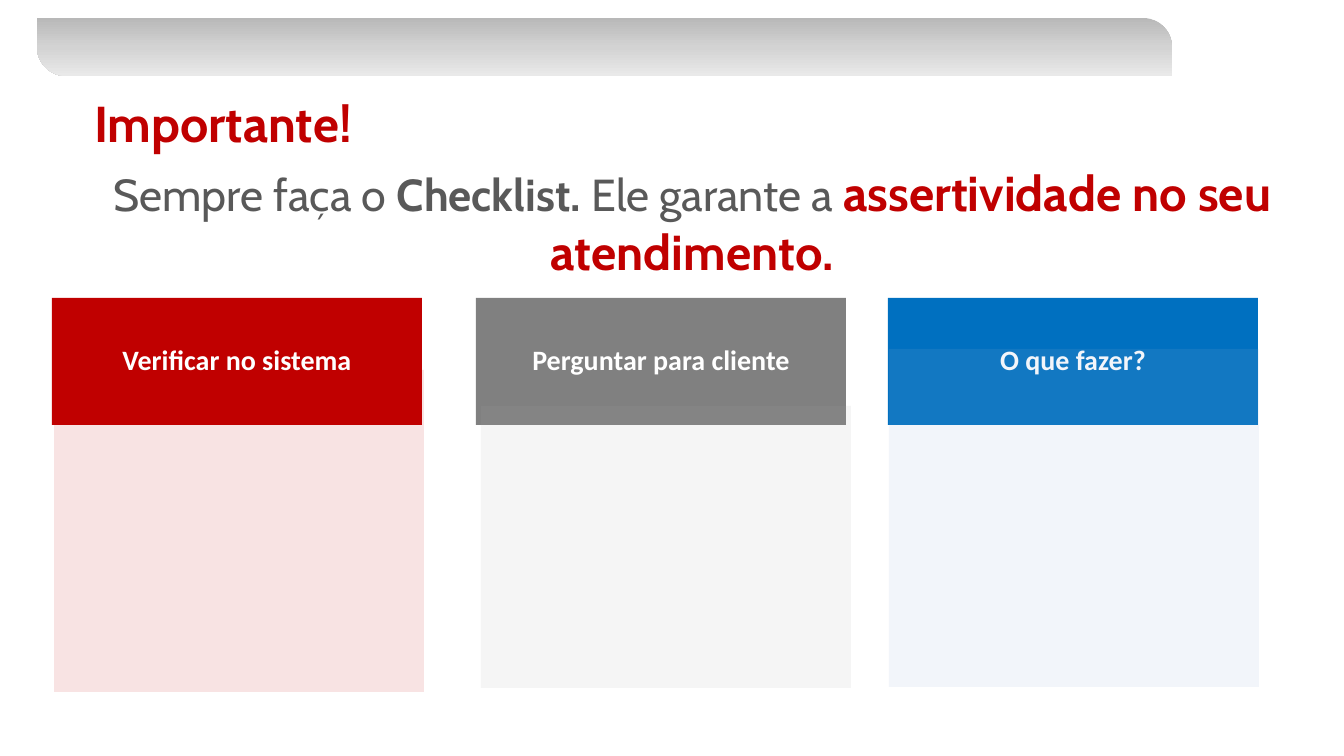
from copy import deepcopy
from dataclasses import dataclass

from lxml import etree
from pptx import Presentation
from pptx.dml.color import RGBColor
from pptx.enum.shapes import MSO_SHAPE
from pptx.enum.text import MSO_ANCHOR, MSO_AUTO_SIZE, PP_ALIGN
from pptx.oxml.ns import qn
from pptx.util import Emu, Pt

RECTANGLE = MSO_SHAPE.RECTANGLE
BANNER_SHAPE = MSO_SHAPE.ROUND_2_DIAG_RECTANGLE
MIDDLE, TOP = MSO_ANCHOR.MIDDLE, MSO_ANCHOR.TOP
CENTER, LEFT = PP_ALIGN.CENTER, PP_ALIGN.LEFT
FIT_SHAPE = MSO_AUTO_SIZE.SHAPE_TO_FIT_TEXT


@dataclass(frozen=True)
class Theme:
    heading_font: str = "Cabin"
    label_font: str = "Calibri"
    red: str = "C00000"
    gray: str = "808080"
    blue: str = "0070C0"
    light_gray: str = "A6A6A6"
    light_blue: str = "95B3D7"
    text: str = "595959"
    white: str = "FFFFFF"
    title_size: int = 36
    sentence_size: int = 32
    emphasis_size: int = 35
    label_size: int = 20


THEME = Theme()

TITLE = "Importante!"
# text, size, colour, bold
SENTENCE = [
    ("Sempre faça o ", THEME.sentence_size, THEME.text, False),
    ("Checklist. ", THEME.sentence_size, THEME.text, True),
    ("Ele garante a ", THEME.sentence_size, THEME.text, False),
    ("assertividade no seu atendimento.", THEME.emphasis_size, THEME.red, True),
]
# label, header left, header colour, panel (left, top, height), panel colour, opacity %
COLUMNS = [
    ("Verificar no sistema", 52, THEME.red, (54, 370, 322), THEME.red, 11),
    ("Perguntar para cliente", 476, THEME.gray, (481, 406, 282), THEME.light_gray, 11),
    ("O que fazer?", 888, THEME.blue, (889, 349, 338), THEME.light_blue, 12),
]
BANNER_STOPS = [(0, "B8B8B8"), (0.5, "D3D3D3"), (1, "E9E9E9")]

PAGE_SIZE = (1344, 756)
BANNER_BOX = (37, 18, 1135, 58)
TITLE_BOX = (84, 87, 345, 72)
SENTENCE_BOX = (84, 158, 1217, 129)
HEADER_TOP, HEADER_HEIGHT, COLUMN_WIDTH = 298, 127, 370
LABEL_INSET_X, LABEL_INSET_Y = 16, 9
EMU_PER_PX = 914400 / 100.8


def px(length):
    return Emu(round(length * EMU_PER_PX))


def add_block(page, kind, box):
    shape = page.shapes.add_shape(kind, *map(px, box))
    shape.shadow.inherit = False
    shape.line.fill.background()
    return shape


def add_rectangle(page, box, color, opacity=100):
    shape = add_block(page, RECTANGLE, box)
    shape.fill.solid()
    shape.fill.fore_color.rgb = RGBColor.from_string(color)
    if opacity < 100:
        color_node = shape.fill._xPr.find(".//" + qn("a:srgbClr"))
        etree.SubElement(color_node, qn("a:alpha")).set("val", str(opacity * 1000))
    return shape


def style_font(font, name, size, color, bold):
    font.name, font.size, font.bold = name, Pt(size), bold
    font.color.rgb = RGBColor.from_string(color)


def add_banner(page):
    banner = add_block(page, BANNER_SHAPE, BANNER_BOX)
    banner.adjustments[0], banner.adjustments[1] = 0, 0.5
    banner.fill.gradient()
    banner.fill.gradient_angle = 270
    stop_list = banner.fill._xPr.find(".//" + qn("a:gsLst"))
    stop_list.append(deepcopy(stop_list[0]))
    for stop, (position, color) in zip(banner.fill.gradient_stops, BANNER_STOPS):
        stop.position = position
        stop.color.rgb = RGBColor.from_string(color)


def add_title(page):
    title = page.shapes.title
    title.left, title.top, title.width, title.height = map(px, TITLE_BOX)
    frame = title.text_frame
    frame.text = TITLE
    frame.vertical_anchor = TOP
    frame.auto_size = FIT_SHAPE
    para = frame.paragraphs[0]
    para.alignment = LEFT
    style_font(para.font, THEME.heading_font, THEME.title_size, THEME.red, True)


def add_column(page, label, left, color, panel, panel_color, opacity):
    header_box = (left, HEADER_TOP, COLUMN_WIDTH, HEADER_HEIGHT)
    frame = add_rectangle(page, header_box, color).text_frame
    frame.text = label
    frame.word_wrap = True
    frame.vertical_anchor = MIDDLE
    frame.margin_left = frame.margin_right = px(LABEL_INSET_X)
    frame.margin_top = frame.margin_bottom = px(LABEL_INSET_Y)
    para = frame.paragraphs[0]
    para.alignment = CENTER
    para.line_spacing = 0.9
    style_font(para.font, THEME.label_font, THEME.label_size, THEME.white, True)

    panel_left, panel_top, panel_height = panel
    panel_box = (panel_left, panel_top, COLUMN_WIDTH, panel_height)
    add_rectangle(page, panel_box, panel_color, opacity)


def add_sentence(page):
    frame = page.shapes.add_textbox(*map(px, SENTENCE_BOX)).text_frame
    frame.word_wrap = True
    frame.auto_size = FIT_SHAPE
    para = frame.paragraphs[0]
    para.alignment = CENTER
    for text, size, color, bold in SENTENCE:
        span = para.add_run()
        span.text = text
        style_font(span.font, THEME.heading_font, size, color, bold)


def main():
    deck = Presentation()
    deck.slide_width, deck.slide_height = map(px, PAGE_SIZE)
    page = deck.slides.add_slide(deck.slide_layouts.get_by_name("Title Only"))
    add_banner(page)
    add_title(page)
    for column in COLUMNS:
        add_column(page, *column)
    add_sentence(page)
    deck.save("out.pptx")


if __name__ == "__main__":
    main()
